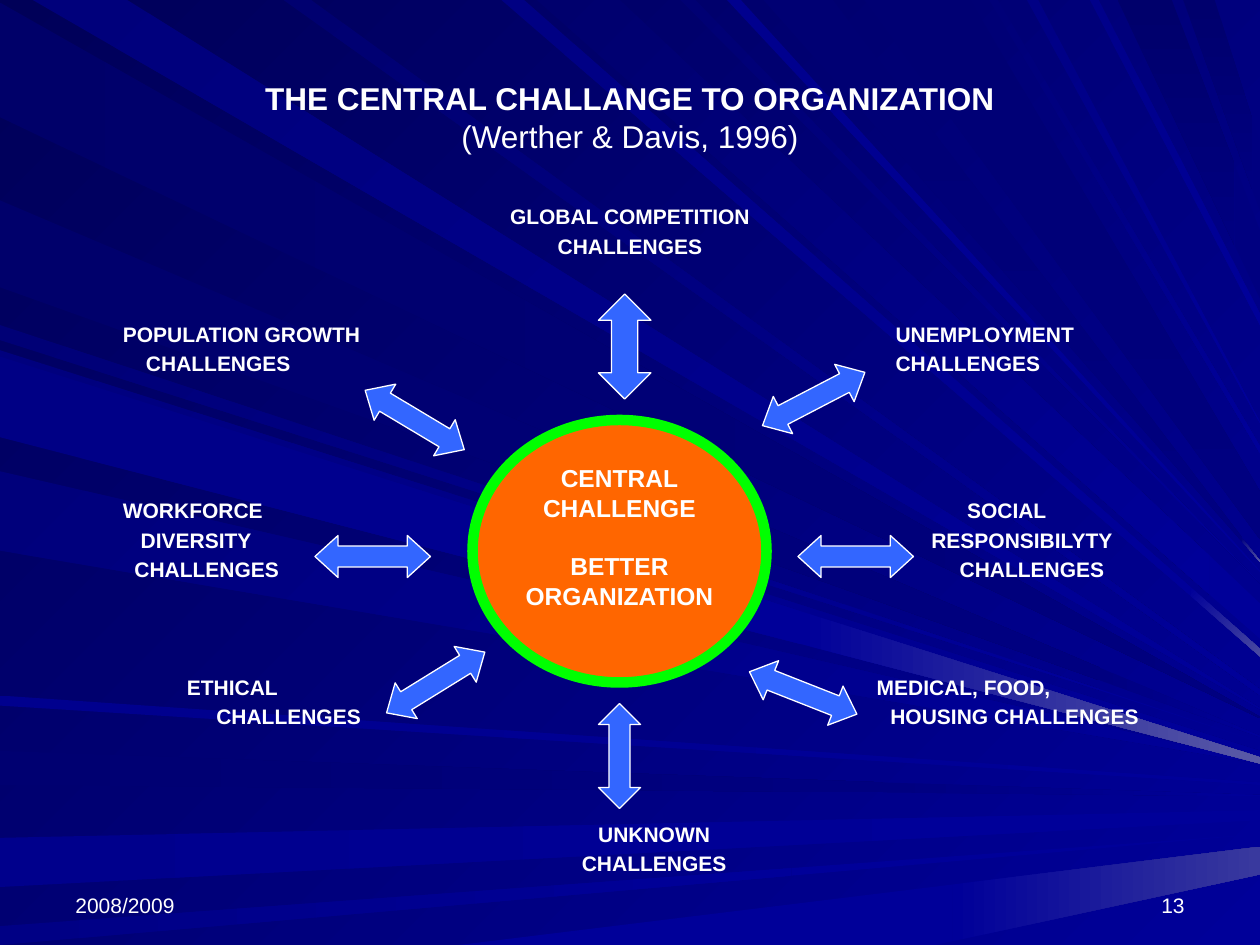
"""Builds the slide on the central challenge to organizations, on a grid of 120 by 90 cells."""
from collections import namedtuple

from pptx import Presentation
from pptx import util as u
from pptx.dml.color import RGBColor
from pptx.enum import shapes, text

COLORS = {
    "white": "FFFFFF", "core": "FF6600", "ring": "00FF00", "arrow": "3366FF",
    "navy": "000080", "blue": "000099", "glow": "39399E", "bright": "4A4AA1", "brightest": "5A5AA6",
}
DEEP_SHADES = "58 69 6B 6D 70 71 73 76 78 7B 7E 83 85 8A 8C 8E"
COLORS.update({shade: f"0000{shade}" for shade in DEEP_SHADES.split()})
RGB = {name: RGBColor.from_string(value) for name, value in COLORS.items()}

WIDTH, HEIGHT = 10, 7.5
COLUMNS, ROWS = 120, 90
CELL = u.Inches(WIDTH) // COLUMNS
HUNDREDTHS = 100
LINE_ROWS, FIRST_LINE = 2.8, 16.6
LABEL_COLUMNS = 28
LEFT, MIDDLE, RIGHT = text.PP_ALIGN.LEFT, text.PP_ALIGN.CENTER, text.PP_ALIGN.RIGHT
TOP, CENTER, BOTTOM = text.MSO_ANCHOR.TOP, text.MSO_ANCHOR.MIDDLE, text.MSO_ANCHOR.BOTTOM


def paint(fill, start, end=None, angle=0):
    if end in (None, start):
        fill.solid()
        fill.fore_color.rgb = RGB[start]
        return
    fill.gradient()
    fill.gradient_angle = (360 - angle) % 360
    for stop, name in zip(fill.gradient_stops, (start, end)):
        stop.color.rgb = RGB[name]


def write(shape, lines, size=12, bold=True, align=LEFT, anchor=TOP, wrap=True,
          gap=0, indents=(), inset=0):
    frame = shape.text_frame
    frame.word_wrap = wrap
    frame.vertical_anchor = anchor
    frame.margin_left = frame.margin_right = u.Inches(inset)
    frame.margin_top = frame.margin_bottom = u.Inches(inset / 2)
    for i, line in enumerate(lines):
        paragraph = frame.add_paragraph() if i else frame.paragraphs[0]
        paragraph.alignment = align
        paragraph.space_before = u.Pt(gap if i else 0)
        if indents:
            paragraph._p.get_or_add_pPr().set("marL", str(int(indents[i] * CELL)))
        run = paragraph.add_run()
        run.text = line
        run.font.name = "Arial"
        run.font.size = u.Pt(size)
        run.font.bold = bold
        run.font.color.rgb = RGB["white"]


deck = Presentation()
deck.slide_width, deck.slide_height = COLUMNS * CELL, ROWS * CELL
slide = deck.slides.add_slide(deck.slide_layouts[6])
paint(slide.background.fill, "58", "blue", 45)

Beam = namedtuple("Beam", "edge source reach tilt hues joint", defaults=[WIDTH])
beams = [
    Beam("left", (0.02, 0.93), (5.69, 5.70), 0, ("69", "navy")),
    Beam("top", (1.01, 0.26), (5.62, 5.63), 45, ("7B", "blue")),
    Beam("left", (5.96, 6.23), (6.31, 6.32), 0, ("71", "navy", "blue"), 7.01),
    Beam("left", (6.65, 7.04), (6.43, 6.51), 0, ("8C", "blue", "blue"), 8.31),
    Beam("left", (7.35, 7.50), (6.62, 6.62), 0, ("85", "blue", "blue"), 6.28),
    Beam("bottom", (3.64, 7.42), (6.72, 6.94), 0, ("blue", "blue", "glow"), 7.56),
    Beam("left", (2.58, 2.70), (5.89, 5.89), 45, ("76", "blue", "blue"), 8.73),
    Beam("left", (1.59, 2.28), (5.84, 5.85), 0, ("6B", "navy", "blue"), 8.73),
    Beam("top", (4.16, 3.98), (5.15, 5.21), 45, ("83", "blue", "bright"), 9.45),
    Beam("top", (4.92, 4.26), (4.79, 5.07), 45, ("6D", "blue", "blue"), 9.6),
    Beam("top", (5.52, 5.40), (4.63, 4.63), 45, ("73", "blue")),
    Beam("top", (6.61, 6.06), (4.45, 4.46), 90, ("73", "navy", "brightest"), 9.86),
    Beam("top", (9.30, 8.87), (1.83, 2.37), 90, ("6B", "navy", "navy"), 9.8),
    Beam("top", (9.64, 9.39), (1.14, 1.67), 90, ("6D", "navy", "navy"), 9.94),
    Beam("left", (2.78, 3.42), (5.96, 6.02), 45, ("7E", "blue")),
    Beam("left", (3.74, 4.37), (6.05, 6.06), 45, ("7B", "blue")),
    Beam("left", (5.52, 5.60), (6.21, 6.23), 0, ("8E", "blue")),
    Beam("top", (2.47, 2.25), (5.47, 5.52), 45, ("70", "blue")),
    Beam("top", (5.88, 5.77), (4.53, 4.54), 45, ("8E", "blue")),
    Beam("top", (7.70, 6.86), (3.90, 4.28), 90, ("73", "navy")),
    Beam("top", (7.92, 7.85), (3.54, 3.60), 45, ("78", "blue")),
    Beam("top", (8.24, 8.15), (3.35, 3.36), 45, ("85", "blue")),
    Beam("top", (8.72, 8.65), (2.49, 2.58), 45, ("8A", "blue")),
    Beam("left", (2.83, 3.47), (6.01, 6.06), 0, ("85", "blue", "brightest"), 6.35),
]
for beam in beams:
    upper, lower = [], []
    for side, start, end_y in zip((upper, lower), beam.source, beam.reach):
        x, y = {"left": (0, start), "top": (start, 0), "bottom": (start, HEIGHT)}[beam.edge]
        share = (beam.joint - x) / (WIDTH - x)
        side += [(x, y), (beam.joint, y + share * (end_y - y)), (WIDTH, end_y)]
    for part, (start, end) in enumerate(zip(beam.hues, beam.hues[1:])):
        outline = upper[part:part + 2] + lower[part:part + 2][::-1]
        corners = [(round(x * HUNDREDTHS), round(y * HUNDREDTHS)) for x, y in outline]
        builder = slide.shapes.build_freeform(*corners[0], scale=u.Inches(1) / HUNDREDTHS)
        builder.add_line_segments(corners[1:], close=True)
        ray = builder.convert_to_shape()
        ray.shadow.inherit = False
        ray.line.fill.background()
        paint(ray.fill, start, end, beam.tilt)

heading = slide.shapes.add_textbox(6 * CELL, int(3.6 * CELL), 108 * CELL, 15 * CELL)
write(heading, ["THE CENTRAL CHALLANGE TO ORGANIZATION", "(Werther & Davis, 1996)"],
      size=18, align=MIDDLE, anchor=CENTER, inset=0.1)
heading.text_frame.paragraphs[1].runs[0].font.bold = False

for left, footer, align in [(6, "2008/2009", LEFT), (86, "13", RIGHT)]:
    box = slide.shapes.add_textbox(left * CELL, 82 * CELL, 28 * CELL, 6 * CELL)
    write(box, [footer], bold=False, align=align, anchor=BOTTOM, inset=0.1)

Challenge = namedtuple("Challenge", "left line lines indents", defaults=[()])
challenges = [
    Challenge(46, 1, ["GLOBAL COMPETITION", "CHALLENGES"]),
    Challenge(11.7, 5, ["POPULATION GROWTH", "CHALLENGES"], (0, 2.2)),
    Challenge(85.3, 5, ["UNEMPLOYMENT", "CHALLENGES"], (0, 0)),
    Challenge(11.7, 11, ["WORKFORCE", "DIVERSITY", "CHALLENGES"], (0, 1.7, 1.1)),
    Challenge(88.7, 11, ["SOCIAL", "RESPONSIBILYTY", "CHALLENGES"], (3.4, 0, 2.7)),
    Challenge(17.8, 17, ["ETHICAL", "CHALLENGES"], (0, 2.8)),
    Challenge(83.5, 17, ["MEDICAL, FOOD,", "HOUSING CHALLENGES"], (0, 1.3)),
    Challenge(48.3, 22, ["UNKNOWN", "CHALLENGES"]),
]
for left, line, lines, indents in challenges:
    top, height = FIRST_LINE + line * LINE_ROWS, len(lines) * LINE_ROWS
    box = slide.shapes.add_textbox(*(int(n * CELL) for n in (left, top, LABEL_COLUMNS, height)))
    write(box, lines, align=LEFT if indents else MIDDLE, gap=2.4, indents=indents)

core = slide.shapes.add_shape(shapes.MSO_SHAPE.OVAL, 45 * CELL, 40 * CELL, 28 * CELL, 25 * CELL)
core.shadow.inherit = False
paint(core.fill, "core")
core.line.color.rgb = RGB["ring"]
core.line.width = u.Pt(6)
write(core, ["CENTRAL", "CHALLENGE", "BETTER", "ORGANIZATION"], size=14, align=MIDDLE,
      anchor=CENTER, wrap=False, inset=0.1)
core.text_frame.paragraphs[2].space_before = u.Pt(16.8)
core.text_frame.margin_bottom = u.Inches(0.28)

UPRIGHT, LEVEL = shapes.MSO_SHAPE.UP_DOWN_ARROW, shapes.MSO_SHAPE.LEFT_RIGHT_ARROW
LENGTHWISE, SLIM = (11, 4), (0.5, 0.55)
arrows = [(UPRIGHT, (57, 28), (5, 10), 0, (0.4, 0.5)), (UPRIGHT, (57, 67), (4, 10), 0, (0.5, 0.5))]
level_places = [(30, 51, 0), (76, 51, 0), (36, 63, 328.3), (71, 64, 21.5), (34, 38, 30.9), (72, 36, 332.5)]
arrows += [(LEVEL, (left, top), LENGTHWISE, turn, SLIM) for left, top, turn in level_places]
for preset, place, extent, turn, proportions in arrows:
    arrow = slide.shapes.add_shape(preset, *(n * CELL for n in place + extent))
    arrow.shadow.inherit = False
    arrow.rotation = turn
    for i, proportion in enumerate(proportions):
        arrow.adjustments[i] = proportion
    paint(arrow.fill, "arrow")
    arrow.line.color.rgb = RGB["white"]
    arrow.line.width = u.Pt(0.75)

deck.save("out.pptx")
